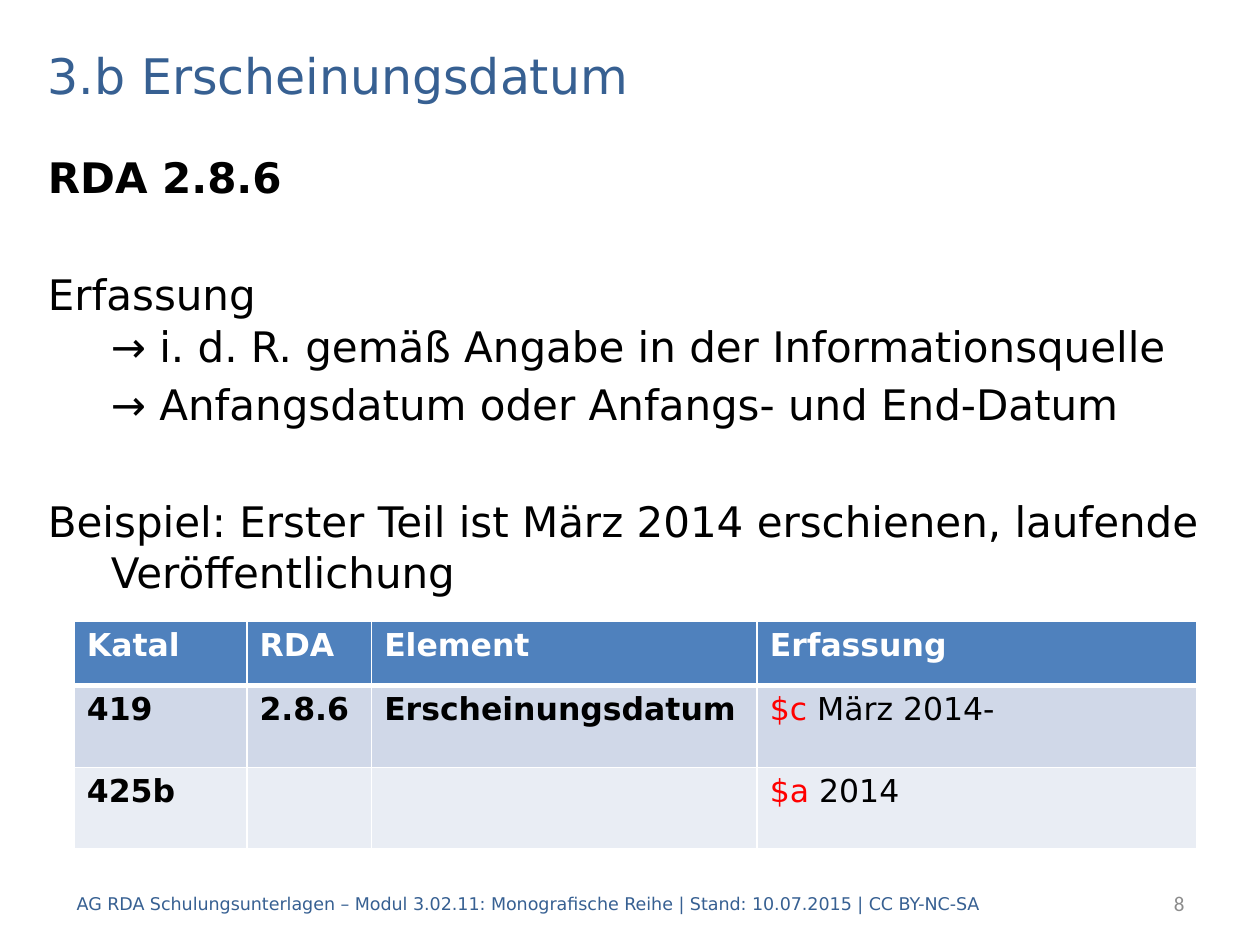
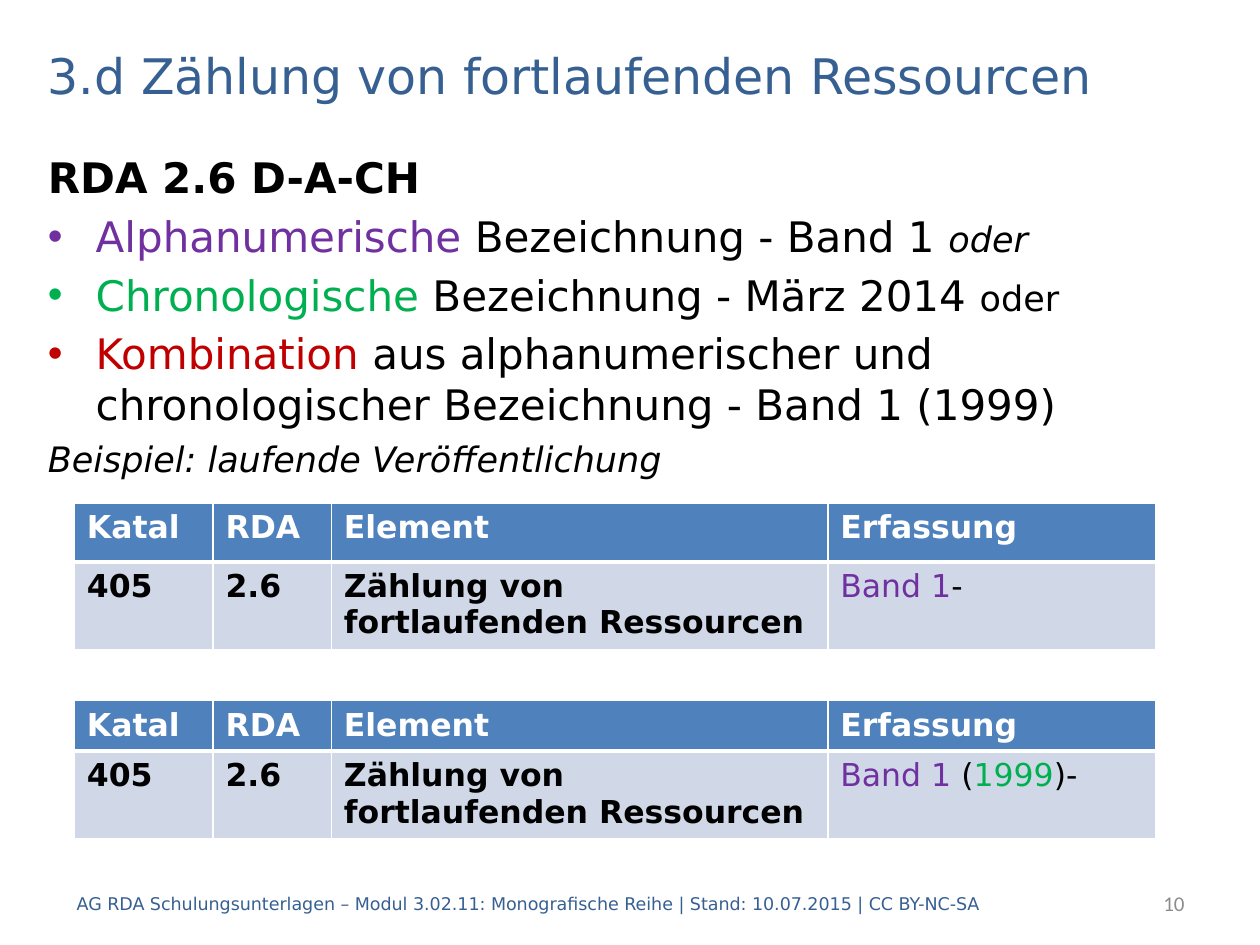
from dataclasses import dataclass

from lxml.etree import SubElement
from pptx import Presentation
from pptx.dml.color import RGBColor
from pptx.enum.text import MSO_ANCHOR, MSO_AUTO_SIZE, PP_ALIGN
from pptx.oxml import parse_xml
from pptx.oxml.ns import nsdecls, qn
from pptx.util import Inches, Pt


@dataclass(frozen=True)
class Theme:
    font: str = "DejaVu Sans"
    page_font: str = "Calibri"
    blue: str = "376092"
    black: str = "000000"
    white: str = "FFFFFF"
    gray: str = "8C8C8C"
    red: str = "FF0000"
    wine: str = "C00000"
    green: str = "00B050"
    violet: str = "7030A0"
    head: str = "4F81BD"
    bands: tuple = ("D0D8E8", "E9EDF4")
    title: int = 28
    body: int = 24
    small: int = 20
    cell: int = 18
    page: int = 12
    foot: int = 10
    leading: float = 1.215
    gap: float = 4.3
    wide_gap: float = 37.7


T = Theme()
FOOTER = ("AG RDA Schulungsunterlagen – Modul 3.02.11: Monografische Reihe"
          " | Stand: 10.07.2015 | CC BY-NC-SA")
HEADS = ("Katal", "RDA", "Element", "Erfassung")


def place(shape, left, top, width, height):
    shape.left, shape.top = Inches(left), Inches(top)
    shape.width, shape.height = Inches(width), Inches(height)


def add_run(para, text, size, color=T.black, bold=False, italic=False, font=T.font):
    run = para.add_run()
    run.text = text
    face = run.font
    face.name, face.size = font, Pt(size)
    face.bold, face.italic = bold, italic
    face.color.rgb = RGBColor.from_string(color)


def add_runs(para, runs, size):
    """Add (text, style) pairs; a line feed as text breaks the line."""
    for text, style in runs:
        if text == "\n":
            para.add_line_break()
        else:
            add_run(para, text, **{"size": size, **style})


def set_title(slide, text):
    shape = slide.shapes.title
    place(shape, 0.28, 0.2, 9.45, 0.79)
    frame = shape.text_frame
    frame.vertical_anchor = MSO_ANCHOR.MIDDLE
    frame.auto_size = MSO_AUTO_SIZE.NONE
    para = frame.paragraphs[0]
    para.alignment = PP_ALIGN.LEFT
    add_run(para, text, T.title, T.blue)


def set_body(slide, items):
    """Fill the body with (runs, layout) items."""
    shape = slide.placeholders[1]
    place(shape, 0.28, 1.15, 9.45, 5.75)
    frame = shape.text_frame
    frame.auto_size = MSO_AUTO_SIZE.NONE
    for index, (runs, layout) in enumerate(items):
        para = frame.paragraphs[0] if index == 0 else frame.add_paragraph()
        format_para(para, first=index == 0, **layout)
        add_runs(para, runs, layout.get("size", T.body))


def format_para(para, first, margin=0.5, indent=-0.5, gap=T.gap, size=T.body,
                bullet=None):
    para.line_spacing = Pt(round(size * T.leading, 1))
    para.space_before = Pt(0 if first else gap)
    props = para._p.get_or_add_pPr()
    props.set("marL", str(Inches(margin)))
    props.set("indent", str(Inches(indent)))
    if bullet:
        SubElement(props, qn("a:buChar")).set("char", bullet)
    else:
        SubElement(props, qn("a:buNone"))


def add_label(slide, box, text, align=PP_ALIGN.LEFT, **style):
    shape = slide.shapes.add_textbox(*map(Inches, box))
    frame = shape.text_frame
    frame.word_wrap = True
    frame.vertical_anchor = MSO_ANCHOR.MIDDLE
    para = frame.paragraphs[0]
    para.alignment = align
    add_run(para, text, **style)


def add_footer(slide, number):
    add_label(slide, (0.51, 6.97, 8.35, 0.4), FOOTER, size=T.foot, color=T.blue)
    add_label(slide, (7.91, 6.97, 1.59, 0.4), str(number), PP_ALIGN.RIGHT,
              size=T.page, color=T.gray, font=T.page_font)


def set_edges(cell, row):
    """Draw white edges, thick between the head row and the next."""
    widths = {"L": 1, "R": 1, "T": 3 if row == 1 else 1, "B": 3 if row == 0 else 1}
    props = cell._tc.get_or_add_tcPr()
    for index, (side, width) in enumerate(widths.items()):
        props.insert(index, parse_xml(
            f'<a:ln{side} {nsdecls("a")} w="{Pt(width)}"><a:solidFill>'
            f'<a:srgbClr val="{T.white}"/></a:solidFill></a:ln{side}>'))


def add_grid(slide, top, widths, heights, rows):
    """Add a table with the shared head row; each cell is a list of runs."""
    head = [[(text, {"color": T.white, "bold": True})] for text in HEADS]
    frame = slide.shapes.add_table(
        len(heights), len(widths), Inches(0.59), Inches(top),
        Inches(sum(widths)), Inches(sum(heights)))
    table = frame.table
    for column, width in zip(table.columns, widths):
        column.width = Inches(width)
    for line, height in zip(table.rows, heights):
        line.height = Inches(height)
    for row, cells in enumerate([head, *rows]):
        fill = T.bands[(row - 1) % 2] if row else T.head
        for col, runs in enumerate(cells):
            cell = table.cell(row, col)
            cell.fill.solid()
            cell.fill.fore_color.rgb = RGBColor.from_string(fill)
            set_edges(cell, row)
            add_runs(cell.text_frame.paragraphs[0], runs, T.cell)


def plain(text):
    return [(text, {})]


def strong(text):
    return [(text, {"bold": True})]


def tint(text, color):
    return [(text, {"color": color})]


def add_page(deck, title, number, items):
    slide = deck.slides.add_slide(deck.slide_layouts[1])
    set_title(slide, title)
    set_body(slide, items)
    add_footer(slide, number)
    return slide


def date_page(deck):
    slide = add_page(deck, "3.b Erscheinungsdatum", 8, [
        (strong("RDA 2.8.6"), {}),
        (plain("Erfassung") + plain("\n")
         + plain("→ i. d. R. gemäß Angabe in der Informationsquelle"),
         {"gap": T.wide_gap}),
        (plain("→ Anfangsdatum oder Anfangs- und End-Datum"), {"indent": 0}),
        (plain("Beispiel: Erster Teil ist März 2014 erschienen, "
               "laufende Veröffentlichung"), {"gap": T.wide_gap}),
    ])
    add_grid(slide, 4.93, (1.37, 0.99, 3.06, 3.49), (0.51, 0.65, 0.65), [
        [strong("419"), strong("2.8.6"), strong("Erscheinungsdatum"),
         tint("$c", T.red) + plain(" März 2014-")],
        [strong("425b"), [], [], tint("$a ", T.red) + plain("2014")],
    ])


def count_page(deck):
    point = {"margin": 0.38, "indent": -0.38, "bullet": "•"}
    small = {"size": T.small}
    slant = {"size": T.small, "italic": True}
    slide = add_page(deck, "3.d Zählung von fortlaufenden Ressourcen", 10, [
        (strong("RDA 2.6 D-A-CH"), {"margin": 0, "indent": 0}),
        (tint("Alphanumerische", T.violet) + plain(" Bezeichnung - Band 1 ")
         + [("oder", slant)], point),
        (tint("Chronologische", T.green) + plain(" Bezeichnung - März 2014 ")
         + [("oder", small)], point),
        (tint("Kombination ", T.wine)
         + plain("aus alphanumerischer und chronologischer Bezeichnung"
                 " - Band 1 (1999)"), point),
        ([("Beispiel: laufende Veröffentlichung", slant)], small),
    ])
    samples = (
        (3.99, 0.47, tint("Band 1", T.violet) + plain("-")),
        (5.56, 0.39, tint("Band 1 ", T.violet) + plain("(")
         + tint("1999", T.green) + plain(")-")),
    )
    for top, height, entry in samples:
        add_grid(slide, top, (1.1, 0.94, 3.94, 2.6), (height, 0.68), [
            [strong("405"), strong("2.6"),
             strong("Zählung von fortlaufenden Ressourcen"), entry]])


def main():
    deck = Presentation()
    deck.slide_width, deck.slide_height = Inches(10), Inches(7.5)
    date_page(deck)
    count_page(deck)
    deck.save("out.pptx")


if __name__ == "__main__":
    main()
